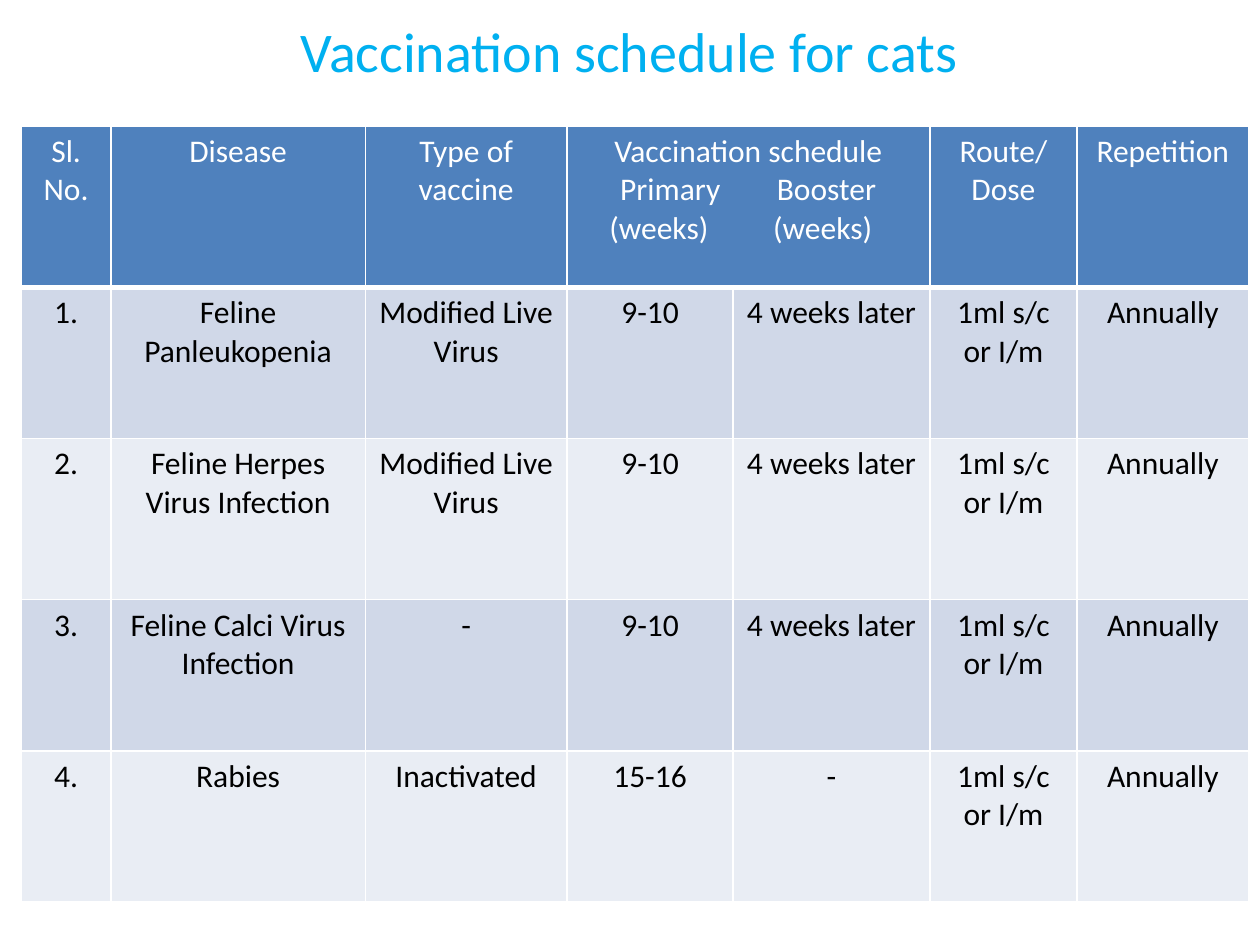
from lxml.etree import SubElement as Sub
from pptx import Presentation
from pptx.dml.color import RGBColor as Rgb
from pptx.enum.text import MSO_ANCHOR as Anchor, PP_ALIGN as Align
from pptx.oxml.ns import qn
from pptx.util import Inches, Pt

HUES = {"title": "00B0F0", "head": "4F81BD", "odd": "D0D8E8",
        "even": "E9EDF4", "white": "FFFFFF", "black": "000000"}

COLS = [0.71, 2.02, 1.6, 1.32, 1.56, 1.17, 1.36]
ROWS = [1.28, 1.2, 1.28, 1.2, 1.2]

# Centres of the two sub-headings, line by line, inside the merged head cell
STOPS = {1: (0.72, 1.96), 2: (0.63, 1.93)}

SPAN = "Vaccination schedule\n\tPrimary\tBooster\n\t(weeks)\t(weeks)"
HEAD = ["Sl. No.", "Disease", "Type of vaccine", SPAN, "",
        "Route/ Dose", "Repetition"]
LATER = "4 weeks later"
LIVE = "Modified Live Virus"
CASES = [
    ("Feline Panleukopenia", LIVE, "9-10", LATER),
    ("Feline Herpes Virus Infection", LIVE, "9-10", LATER),
    ("Feline Calci Virus Infection", "-", "9-10", LATER),
    ("Rabies", "Inactivated", "15-16", "-"),
]


class Deck:
    def __init__(self):
        self.prs = Presentation()
        self.prs.slide_width, self.prs.slide_height = Inches(10), Inches(7.5)
        self.slide = self.prs.slides.add_slide(self.prs.slide_layouts[5])
        self.face = "Calibri"

    def text(self, para, words, size, hue):
        para.alignment = Align.CENTER
        run = para.add_run()
        run.text = words
        font = run.font
        font.name, font.size = self.face, Pt(size)
        font.color.rgb = Rgb.from_string(HUES[hue])

    def title(self, words, left, top, width, height):
        box = self.slide.shapes.title
        box.left, box.top = Inches(left), Inches(top)
        box.width, box.height = Inches(width), Inches(height)
        frame = box.text_frame
        frame.vertical_anchor = Anchor.TOP
        self.text(frame.paragraphs[0], words, 32, "title")

    def tabs(self, para, stops):
        """Left-align the line and add centred tab stops."""
        para.alignment = Align.LEFT
        tabs = Sub(para._p.get_or_add_pPr(), qn("a:tabLst"))
        for stop in stops:
            Sub(tabs, qn("a:tab"), pos=str(Inches(stop)), algn="ctr")

    def edge(self, cell, base):
        """Draw white borders; base is the width of the bottom one."""
        props = cell._tc.get_or_add_tcPr()
        for side, width in zip("LRTB", (1, 1, 1, base)):
            line = Sub(props, qn(f"a:ln{side}"), w=str(Pt(width)))
            fill = Sub(line, qn("a:solidFill"))
            Sub(fill, qn("a:srgbClr"), val=HUES["white"])

    def cell(self, cell, words, fill, hue, base):
        self.edge(cell, base)
        cell.fill.solid()
        cell.fill.fore_color.rgb = Rgb.from_string(HUES[fill])
        frame = cell.text_frame
        for i, line in enumerate(words.split("\n")):
            para = frame.add_paragraph() if i else frame.paragraphs[0]
            self.text(para, line, 18, hue)
            if "\t" in line:
                self.tabs(para, STOPS[i])

    def table(self, data, left, top):
        grid = self.slide.shapes.add_table(
            len(ROWS), len(COLS), Inches(left), Inches(top),
            Inches(sum(COLS)), Inches(sum(ROWS))).table
        for col, width in zip(grid.columns, COLS):
            col.width = Inches(width)
        for row, height in zip(grid.rows, ROWS):
            row.height = Inches(height)
        grid.cell(0, 3).merge(grid.cell(0, 4))
        for r, line in enumerate(data):
            if r == 0:
                style = "head", "white", 3
            else:
                style = "odd" if r % 2 else "even", "black", 1
            for c, words in enumerate(line):
                self.cell(grid.cell(r, c), words, *style)


def main():
    deck = Deck()
    deck.title("Vaccination schedule for cats", 0.08, 0.08, 9.83, 7.33)
    body = [(f"{n}.", *case, "1ml s/c or I/m", "Annually")
            for n, case in enumerate(CASES, 1)]
    deck.table([HEAD, *body], 0.17, 1)
    deck.prs.save("out.pptx")


if __name__ == "__main__":
    main()
